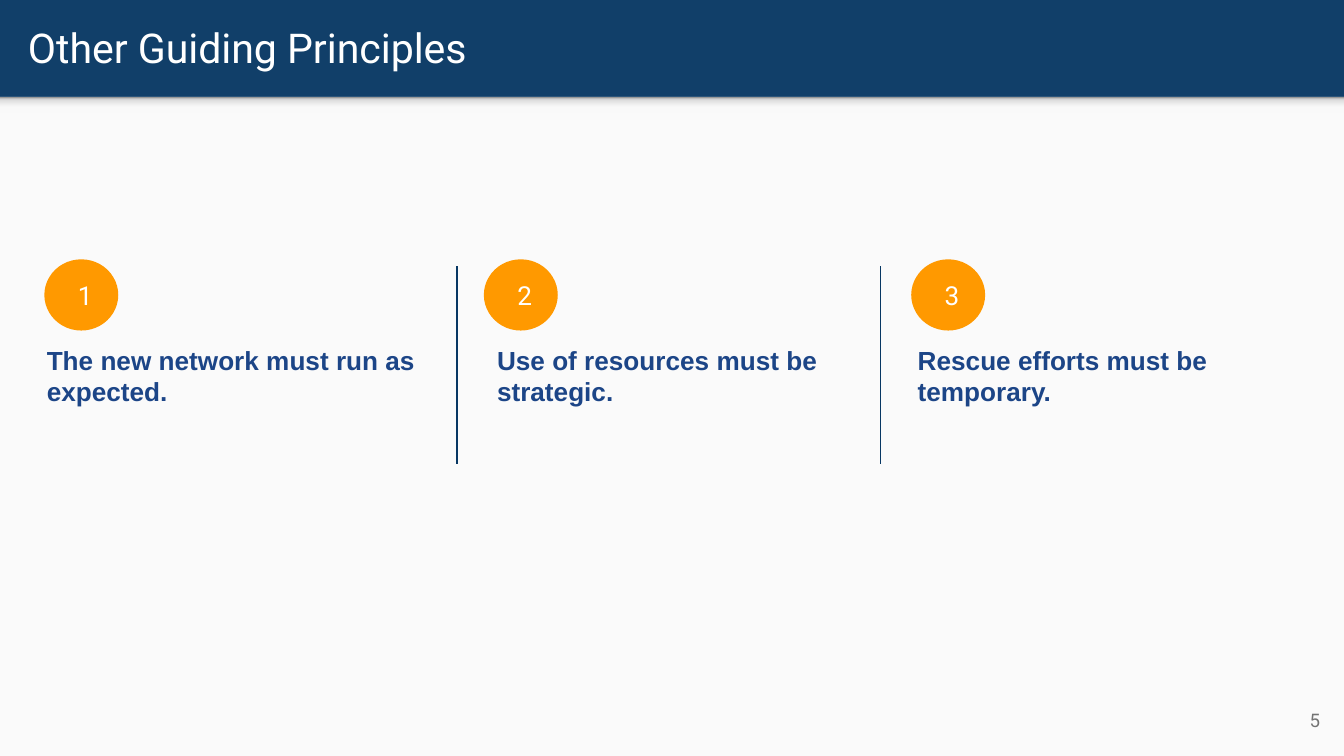
from lxml import etree
from pptx import Presentation
from pptx.dml.color import RGBColor
from pptx.enum.shapes import MSO_CONNECTOR, MSO_SHAPE
from pptx.enum.text import MSO_ANCHOR, PP_ALIGN
from pptx.oxml.ns import qn
from pptx.util import Inches, Pt

RECTANGLE, OVAL = MSO_SHAPE.RECTANGLE, MSO_SHAPE.OVAL
STRAIGHT = MSO_CONNECTOR.STRAIGHT
TOP, MIDDLE = MSO_ANCHOR.TOP, MSO_ANCHOR.MIDDLE
LEFT, CENTER, RIGHT = PP_ALIGN.LEFT, PP_ALIGN.CENTER, PP_ALIGN.RIGHT

COLORS = {
    "banner": "113F69",
    "body": "FAFAFA",
    "badge": "FF9900",
    "white": "FFFFFF",
    "principle": "1C4587",
    "divider": "073763",
    "page": "737373",
}
# Position in percent and colour, from the bottom of the shadow to its top
SHADOW_STOPS = [(0, "F9F9F9"), (36, "F9F9F9"), (80, "DEDEDE"), (100, "999999")]

SLIDE_W = 10
SLIDE_H = SLIDE_W * 9 / 16
BANNER_H = 0.72
PRINCIPLES_TOP = 1.93
# Badge left, caption left, caption width, principle
PRINCIPLES = [
    (0.33, 0.25, 3.1, "The new network must run as expected."),
    (3.6, 3.6, 2.87, "Use of resources must be strategic."),
    (6.78, 6.73, 3.1, "Rescue efforts must be temporary."),
]
DIVIDERS = [3.4, 6.55]


def rgb(name):
    return RGBColor.from_string(COLORS[name])


def write(shape, text, *, size, color, font="Roboto", bold=False,
          align=LEFT, anchor=MIDDLE, right_inset=0.1):
    frame = shape.text_frame
    frame.word_wrap = True
    frame.vertical_anchor = anchor
    frame.margin_left = frame.margin_top = frame.margin_bottom = Inches(0.1)
    frame.margin_right = Inches(right_inset)
    paragraph = frame.paragraphs[0]
    paragraph.alignment = align
    run = paragraph.add_run()
    run.text = text
    run.font.name = font
    run.font.size = Pt(size)
    run.font.bold = bold
    run.font.color.rgb = rgb(color)


def add_text(slide, box, text, **style):
    write(slide.shapes.add_textbox(*map(Inches, box)), text, **style)


def add_filled(slide, preset, box, color):
    shape = slide.shapes.add_shape(preset, *map(Inches, box))
    shape.shadow.inherit = False
    shape.line.fill.background()
    shape.fill.solid()
    shape.fill.fore_color.rgb = rgb(color)
    return shape


def add_banner(slide, left, top, width, height):
    # The slide background shows above the body panel as the banner
    slide.background.fill.solid()
    slide.background.fill.fore_color.rgb = rgb("banner")
    add_filled(slide, RECTANGLE,
               (left, top + height, width, SLIDE_H - top - height), "body")

    # Soft shadow under the banner
    shadow = add_filled(slide, RECTANGLE, (left, top + height, width, 0.12), "body")
    shadow.fill.gradient()
    shadow.fill.gradient_angle = 90
    stops = shadow._element.spPr.find(qn("a:gradFill")).find(qn("a:gsLst"))
    for stop in list(stops):
        stops.remove(stop)
    for percent, color in SHADOW_STOPS:
        stop = etree.SubElement(stops, qn("a:gs"), pos=str(percent * 1000))
        etree.SubElement(stop, qn("a:srgbClr"), val=color)

    add_text(slide, (left + 0.11, top + 0.02, 9.65, 0.66),
             "Other Guiding Principles", size=22, color="white")


def add_principle(slide, number, top, badge_left, caption_left, width, text):
    badge = add_filled(slide, OVAL, (badge_left, top, 0.55, 0.53), "badge")
    write(badge, str(number), size=14, color="white", align=CENTER,
          right_inset=0.04)
    add_text(slide, (caption_left, top + 0.53, width, 0.91), text,
             size=14, color="principle", font="Arial", bold=True, anchor=TOP)


def add_divider(slide, x, top, height):
    divider = slide.shapes.add_connector(
        STRAIGHT, Inches(x), Inches(top), Inches(x), Inches(top + height))
    divider.line.color.rgb = rgb("divider")
    divider.line.width = Pt(0.75)
    etree.SubElement(divider._element.spPr, qn("a:effectLst"))


def main():
    deck = Presentation()
    deck.slide_width, deck.slide_height = Inches(SLIDE_W), Inches(SLIDE_H)
    slide = deck.slides.add_slide(deck.slide_layouts[6])

    add_banner(slide, 0, 0, SLIDE_W, BANNER_H)
    for number, principle in enumerate(PRINCIPLES, 1):
        add_principle(slide, number, PRINCIPLES_TOP, *principle)
    for x in DIVIDERS:
        add_divider(slide, x, PRINCIPLES_TOP + 0.05, 1.47)

    # Page number
    add_text(slide, (9.32, 5.14, 0.6, 0.43), "5",
             size=10, color="page", align=RIGHT)

    deck.save("out.pptx")


if __name__ == "__main__":
    main()
